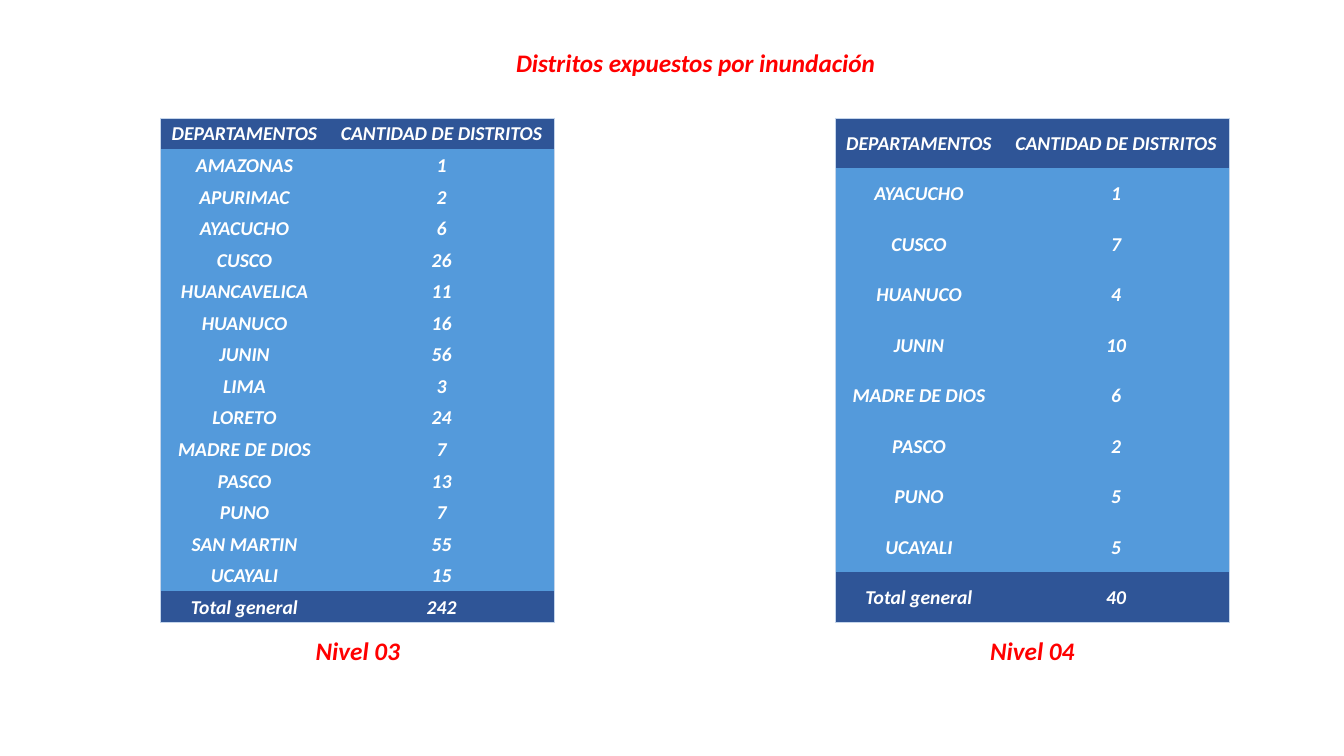
from dataclasses import dataclass
from lxml.etree import SubElement
from pptx import Presentation
from pptx.dml.color import RGBColor
from pptx.enum.text import MSO_ANCHOR, MSO_AUTO_SIZE, PP_ALIGN
from pptx.oxml.ns import qn
from pptx.util import Pt

PX = 9144
PLAIN = "{2D5ABB26-0587-4C30-8999-92F81FD0307C}"


@dataclass(frozen=True)
class Theme:
    font: str = "Calibri"
    red: str = "FF0000"
    white: str = "FFFFFF"
    dark: str = "2F5597"
    blue: str = "549ADB"
    edge: str = "C4D5EB"
    head: int = 18
    cell: int = 14


THEME = Theme()
LEVELS = [
    (159, "Nivel 03", [
        ("AMAZONAS", 1), ("APURIMAC", 2), ("AYACUCHO", 6), ("CUSCO", 26),
        ("HUANCAVELICA", 11), ("HUANUCO", 16), ("JUNIN", 56), ("LIMA", 3),
        ("LORETO", 24), ("MADRE DE DIOS", 7), ("PASCO", 13), ("PUNO", 7),
        ("SAN MARTIN", 55), ("UCAYALI", 15)]),
    (828, "Nivel 04", [
        ("AYACUCHO", 1), ("CUSCO", 7), ("HUANUCO", 4), ("JUNIN", 10),
        ("MADRE DE DIOS", 6), ("PASCO", 2), ("PUNO", 5), ("UCAYALI", 5)]),
]


def scale(*box):
    return [n * PX for n in box]


def write(frame, text, size, color):
    frame.text = text
    line = frame.paragraphs[0]
    line.alignment = PP_ALIGN.CENTER
    font = line.runs[0].font
    font.name, font.size = THEME.font, Pt(size)
    font.bold = font.italic = True
    font.color.rgb = RGBColor.from_string(color)


def add_title(slide, box):
    title = slide.shapes.title
    title.left, title.top, title.width, title.height = scale(*box)
    frame = title.text_frame
    write(frame, "Distritos expuestos por inundación", THEME.head, THEME.red)
    frame.word_wrap = False
    frame.auto_size = MSO_AUTO_SIZE.NONE
    frame.vertical_anchor = MSO_ANCHOR.TOP


def add_label(slide, box, text):
    frame = slide.shapes.add_textbox(*scale(*box)).text_frame
    frame.word_wrap = True
    write(frame, text, THEME.head, THEME.red)


def add_edge(cell, side):
    line = SubElement(cell._tc.get_or_add_tcPr(), qn(f"a:ln{side}"), w=str(Pt(0.5)))
    fill = SubElement(line, qn("a:solidFill"))
    SubElement(fill, qn("a:srgbClr"), val=THEME.edge)


def add_cell(cell, text, sides, fill):
    write(cell.text_frame, text, THEME.cell, THEME.white)
    cell.vertical_anchor = MSO_ANCHOR.MIDDLE
    cell.margin_left = cell.margin_right = cell.margin_top = PX
    cell.margin_bottom = 0
    for side in sides:
        add_edge(cell, side)
    cell.fill.solid()
    cell.fill.fore_color.rgb = RGBColor.from_string(fill)


def add_level(slide, box, name, data):
    left, top, width, height = box
    total = sum(count for _, count in data)
    rows = [("DEPARTAMENTOS", "CANTIDAD DE DISTRITOS"), *data, ("Total general", total)]
    last = len(rows) - 1
    table = slide.shapes.add_table(len(rows), 2, *scale(*box)).table
    table.first_row = table.horz_banding = False
    table._tbl.tblPr.find(qn("a:tableStyleId")).text = PLAIN
    first = 167
    table.columns[0].width, table.columns[1].width = scale(first, width - first)
    for r, row in enumerate(rows):
        table.rows[r].height = height * PX // len(rows)
        ends = {0: "T", last: "B"}.get(r, "")
        for c, text in enumerate(row):
            fill = THEME.dark if ends else THEME.blue
            add_cell(table.cell(r, c), str(text), "LR"[c] + ends, fill)
    add_label(slide, (left + 136, top + height + 7, 120, 40), name)


def main():
    deck = Presentation()
    deck.slide_width, deck.slide_height = scale(1333, 750)
    slide = deck.slides.add_slide(deck.slide_layouts[5])
    add_title(slide, (500, 42, 380, 40))
    for left, name, data in LEVELS:
        add_level(slide, (left, 117, 391, 501), name, data)
    deck.save("out.pptx")


if __name__ == "__main__":
    main()
